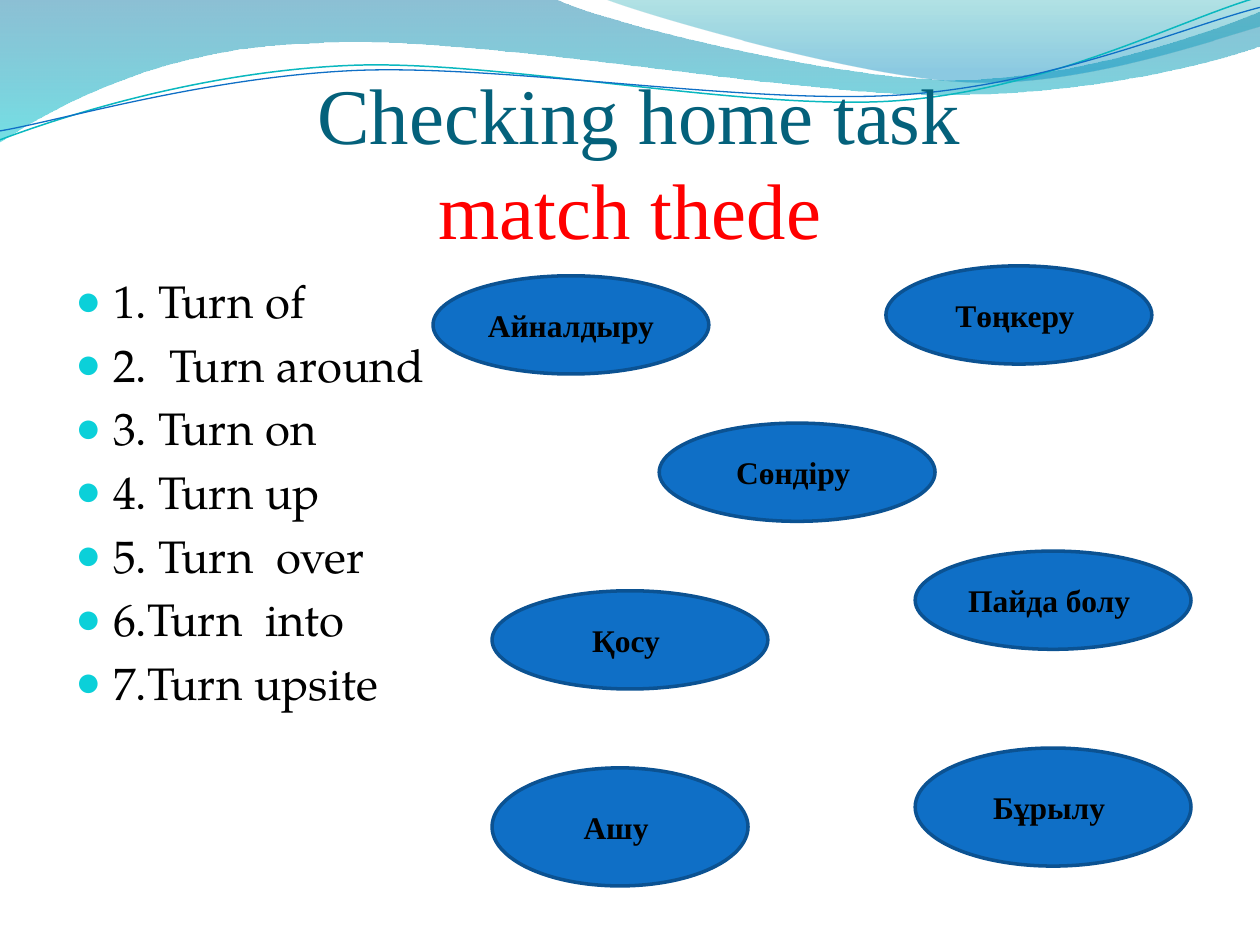
import dataclasses
import typing

import lxml.etree
import pptx
import pptx.dml.color
import pptx.enum.shapes
import pptx.enum.text
import pptx.oxml.ns
import pptx.util

Cm, Pt = pptx.util.Cm, pptx.util.Pt
RGB = pptx.dml.color.RGBColor.from_string
ALIGN, ANCHOR = pptx.enum.text.PP_ALIGN, pptx.enum.text.MSO_ANCHOR
qn = pptx.oxml.ns.qn


@dataclasses.dataclass(frozen=True)
class Theme:
    title: str = "04617B"
    accent: str = "FF0000"
    ink: str = "000000"
    bullet: str = "0BD0D9"
    oval: str = "0F6FC6"
    edge: str = "0B5292"
    serif: str = "Times New Roman"
    body: str = "TeX Gyre Pagella"
    big: float = 45
    mid: float = 26
    small: float = 18


class Stop(typing.NamedTuple):
    place: float
    color: str
    alpha: int  # percent opaque


class Wave(typing.NamedTuple):
    start: tuple
    steps: list  # a pair is a line, six numbers are a curve; in cm
    stops: tuple = ()
    line: tuple = ()


class Oval(typing.NamedTuple):
    text: str
    left: float
    top: float
    width: float = 5.56
    height: float = 1.98


THEME = Theme()

WAVES = [
    Wave((0, 0), [(11.18, -0.03), (12.09, 0.43, 16.87, 1.6, 19.25, 1.6),
                  (21.67, 1.6, 24.33, 0.66, 25.4, 0.23), (25.43, 0.91),
                  (24.97, 1.12, 22.1, 1.93, 18.95, 1.91),
                  (15.8, 1.91, 9.7, 0.71, 6.53, 0.86),
                  (3.28, 0.91, 1.17, 2.11, -0.03, 2.87)],
         stops=(Stop(0, "0074A1", 45), Stop(1, "00C6CF", 55))),
    Wave((12.17, -0.03), [(12.93, 0.28, 17.32, 1.57, 19.53, 1.65),
                          (21.74, 1.75, 24.41, 0.81, 25.4, 0.53), (25.4, 0)],
         stops=(Stop(0, "00A1A9", 30), Stop(0.8, "008BBF", 45))),
    Wave((0, 2.82), [(1.22, 2.36, 4.01, 1.45, 7.04, 1.32),
                     (10.03, 1.19, 15.06, 2.26, 18.11, 2.03),
                     (21.16, 1.8, 23.83, 0.38, 25.35, -0.05)],
         line=("0AB8BF", 0.85)),
    Wave((0, 2.64), [(1.19, 2.44, 4.17, 1.55, 7.19, 1.42),
                     (10.24, 1.3, 15.16, 2.13, 18.21, 1.91),
                     (21.23, 1.7, 23.9, 0.53, 25.4, 0.15)],
         line=("0F6FC6", 0.75)),
]

VERBS = ["1. Turn of", "2.  Turn around", "3. Turn on", "4. Turn up",
         "5. Turn  over", "6.Turn  into", "7.Turn upsite"]

OVALS = [
    Oval("Айналдыру ", 8.73, 5.56),
    Oval("Төңкеру ", 17.86, 5.36, width=5.36),
    Oval("Бұрылу ", 18.45, 15.08, height=2.38),
    Oval("Сөндіру ", 13.29, 8.53),
    Oval("Қосу ", 9.92, 11.91),
    Oval("Пайда болу ", 18.45, 11.11),
    Oval("Ашу ", 9.92, 15.48, width=5.16, height=2.38),
]


def put(item, **values) -> None:
    for name, value in values.items():
        setattr(item, name, value)


def add_run(para, text: str, font: str, size: float, color: str, bold=False) -> None:
    run = para.add_run()
    run.text = text
    put(run.font, name=font, size=Pt(size), bold=bold)
    run.font.color.rgb = RGB(color)


def bend(shape, steps: list) -> None:
    """Join the three segments of each curved step into one Bezier curve."""
    parts = iter(list(shape._element.iter(qn("a:lnTo"))))
    for step in steps:
        first, *rest = [next(parts) for _ in range(len(step) // 2)]
        if rest:
            curve = lxml.etree.Element(qn("a:cubicBezTo"))
            first.addprevious(curve)
            for part in (first, *rest):
                curve.append(part[0])
                part.getparent().remove(part)


def draw_wave(shapes, wave: Wave) -> None:
    points = [(Cm(step[i]), Cm(step[i + 1]))
              for step in wave.steps for i in range(0, len(step), 2)]
    path = shapes.build_freeform(*(Cm(n) for n in wave.start))
    path.add_line_segments(points, close=bool(wave.stops))
    shape = path.convert_to_shape()
    bend(shape, wave.steps)
    shape.shadow.inherit = False
    if wave.line:
        color, width = wave.line
        shape.fill.background()
        shape.line.color.rgb = RGB(color)
        shape.line.width = Pt(width)
        return
    shape.line.fill.background()
    shape.fill.gradient()
    shape.fill.gradient_angle = 270
    for mark, stop in zip(shape.fill.gradient_stops, wave.stops):
        mark.position = stop.place
        mark.color.rgb = RGB(stop.color)
    tints = shape._element.spPr.iter(qn("a:srgbClr"))
    for tint, stop in zip(tints, wave.stops):
        lxml.etree.SubElement(tint, qn("a:alpha"), val=str(stop.alpha * 1000))


def draw_title(shapes) -> None:
    title = shapes.title
    put(title, left=Cm(1.27), top=Cm(1.96), width=Cm(22.86), height=Cm(3.18))
    frame = title.text_frame
    put(frame, auto_size=pptx.enum.text.MSO_AUTO_SIZE.NONE, word_wrap=True,
        vertical_anchor=ANCHOR.BOTTOM, margin_left=0, margin_right=0,
        margin_top=Cm(0.13), margin_bottom=0)
    para = frame.paragraphs[0]
    para.alignment = ALIGN.CENTER
    add_run(para, " ", "Calibri", THEME.big, THEME.title)
    add_run(para, "Checking home task", THEME.serif, THEME.big, THEME.title)
    para.add_line_break()
    add_run(para, "match thede", THEME.serif, THEME.big, THEME.accent)
    shapes._spTree.append(title._element)  # in front of the waves


def draw_list(shapes, lines: list) -> None:
    frame = shapes.add_textbox(Cm(1.27), Cm(5.38), Cm(22.86), Cm(12.19)).text_frame
    frame.word_wrap = True
    for i, text in enumerate(lines):
        para = frame.add_paragraph() if i else frame.paragraphs[0]
        para.space_before = Pt(THEME.mid * 0.2)
        add_run(para, text, THEME.body, THEME.mid, THEME.ink)
        props = para._p.get_or_add_pPr()
        props.set("marL", str(Cm(0.76)))
        props.set("indent", str(-Cm(0.76)))
        tint = lxml.etree.SubElement(props, qn("a:buClr"))
        lxml.etree.SubElement(tint, qn("a:srgbClr"), val=THEME.bullet)
        lxml.etree.SubElement(props, qn("a:buSzPct"), val="95000")
        lxml.etree.SubElement(props, qn("a:buFont"), typeface=THEME.serif)
        lxml.etree.SubElement(props, qn("a:buChar"), char="●")


def draw_oval(shapes, oval: Oval) -> None:
    shape = shapes.add_shape(pptx.enum.shapes.MSO_SHAPE.OVAL,
                             *(Cm(size) for size in oval[1:]))
    shape.shadow.inherit = False
    shape.fill.solid()
    shape.fill.fore_color.rgb = RGB(THEME.oval)
    shape.line.color.rgb = RGB(THEME.edge)
    shape.line.width = Pt(2)
    put(shape.text_frame, word_wrap=True, vertical_anchor=ANCHOR.MIDDLE)
    para = shape.text_frame.paragraphs[0]
    para.alignment = ALIGN.CENTER
    add_run(para, oval.text, THEME.serif, THEME.small, THEME.ink, bold=True)


def main() -> None:
    deck = pptx.Presentation()
    put(deck, slide_width=Cm(25.4), slide_height=Cm(19.05))
    shapes = deck.slides.add_slide(deck.slide_layouts[5]).shapes
    # Waves along the top
    for wave in WAVES:
        draw_wave(shapes, wave)
    # Heading and verbs
    draw_title(shapes)
    draw_list(shapes, VERBS)
    # Meanings to match
    for oval in OVALS:
        draw_oval(shapes, oval)
    deck.save("out.pptx")


if __name__ == "__main__":
    main()
